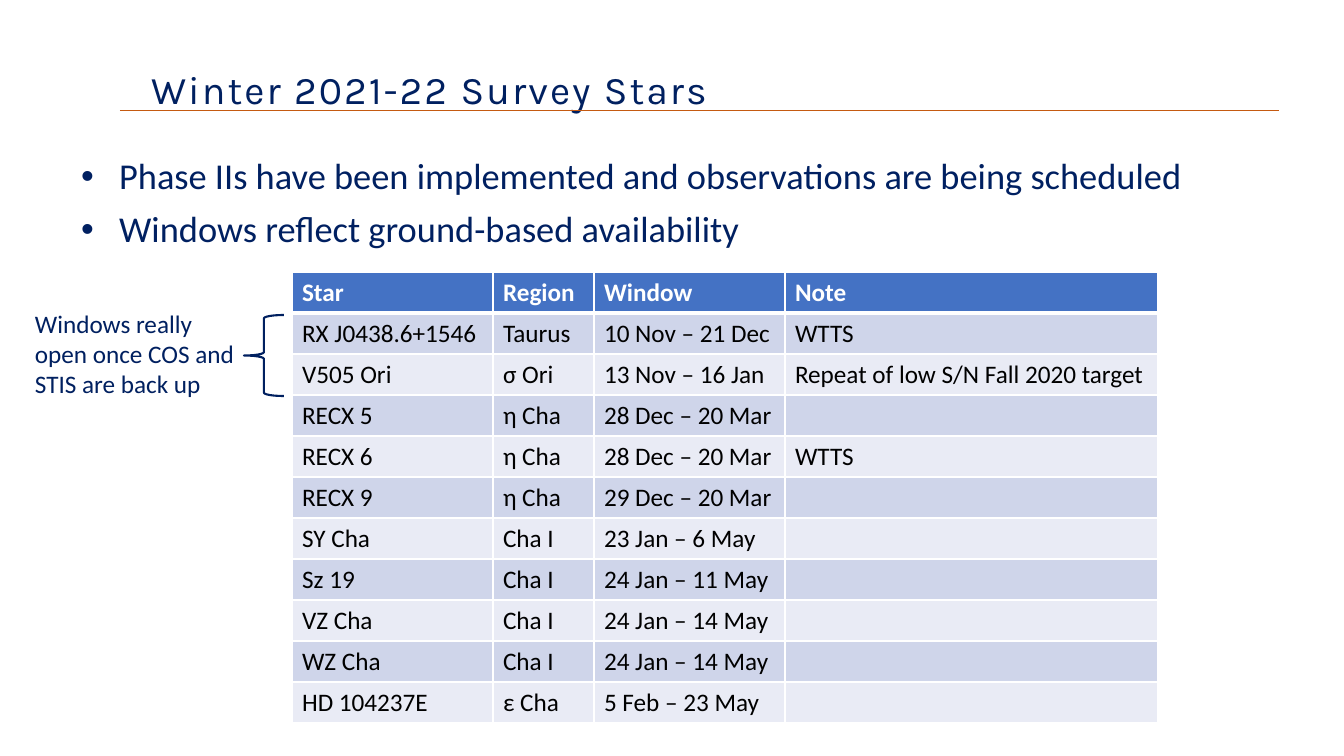
from lxml import etree
from pptx import Presentation, util as u
from pptx.dml.color import RGBColor
from pptx.enum import shapes, text
from pptx.oxml import ns

PX = 914400 / 100.8
NAVY = RGBColor(0x00, 0x20, 0x60)
LIST_NAVY = RGBColor(0x00, 0x20, 0x61)
RUST = RGBColor(0xC5, 0x5A, 0x11)
BLUE = RGBColor(0x44, 0x72, 0xC4)
BAND_DARK = RGBColor(0xCF, 0xD5, 0xEA)
BAND_LIGHT = RGBColor(0xE9, 0xEB, 0xF5)
WHITE = RGBColor(0xFF, 0xFF, 0xFF)
BLACK = RGBColor(0x00, 0x00, 0x00)


def px(*lengths):
    return [u.Emu(round(length * PX)) for length in lengths]


def write(para, words, size=18, font="Calibri", color=NAVY, bold=False,
          line_spacing=None, space_before=0, bullet=None, tracking=None):
    if bullet:
        properties = para._p.get_or_add_pPr()
        indent, = px(38)
        properties.set("marL", str(indent))
        properties.set("indent", str(-indent))
        etree.SubElement(properties, ns.qn("a:buFont")).set("typeface", "Arial")
        etree.SubElement(properties, ns.qn("a:buChar")).set("char", bullet)
    para.alignment = text.PP_ALIGN.LEFT
    para.line_spacing = line_spacing
    para.space_before = u.Pt(space_before)
    span = para.add_run()
    span.text = words
    span.font.size = u.Pt(size)
    span.font.name = font
    span.font.bold = bold
    span.font.color.rgb = color
    if tracking:
        span._r.get_or_add_rPr().set("spc", str(round(tracking * 100)))


deck = Presentation()
deck.slide_width, deck.slide_height = px(1344, 756)
page = deck.slides.add_slide(deck.slide_layouts[1])

# Title and the rule under it
title = page.shapes.title
title.left, title.top, title.width, title.height = px(141, 57, 1152, 69)
title.text_frame.auto_size = text.MSO_AUTO_SIZE.NONE
title.text_frame.vertical_anchor = text.MSO_ANCHOR.MIDDLE
write(title.text_frame.paragraphs[0], "Winter 2021-22 Survey Stars",
      size=28, font="Karla", line_spacing=0.9, tracking=1.5)

rule = page.shapes.add_connector(shapes.MSO_CONNECTOR.STRAIGHT, *px(120, 110, 1279, 110))
rule.line.color.rgb = RUST
rule.line.width = u.Pt(0.5)
etree.SubElement(rule._element.spPr, ns.qn("a:effectLst"))

# Bulleted list
body = page.placeholders[1]
body.left, body.top, body.width, body.height = px(71, 153, 1242, 547)
body.text_frame.auto_size = text.MSO_AUTO_SIZE.NONE
points = ["Phase IIs have been implemented and observations are being scheduled",
          "Windows reflect ground-based availability"]
for index, point in enumerate(points):
    para = body.text_frame.add_paragraph() if index else body.text_frame.paragraphs[0]
    write(para, point, size=26, color=LIST_NAVY, line_spacing=0.9,
          space_before=10 if index else 0, bullet="•")

# Table of survey stars
stars = [
    ("Star", "Region", "Window", "Note"),
    ("RX J0438.6+1546", "Taurus", "10 Nov – 21 Dec", "WTTS"),
    ("V505 Ori", "σ Ori", "13 Nov – 16 Jan", "Repeat of low S/N Fall 2020 target"),
    ("RECX 5", "η Cha", "28 Dec – 20 Mar", ""),
    ("RECX 6", "η Cha", "28 Dec – 20 Mar", "WTTS"),
    ("RECX 9", "η Cha", "29 Dec – 20 Mar", ""),
    ("SY Cha", "Cha I", "23 Jan – 6 May", ""),
    ("Sz 19", "Cha I", "24 Jan – 11 May", ""),
    ("VZ Cha", "Cha I", "24 Jan – 14 May", ""),
    ("WZ Cha", "Cha I", "24 Jan – 14 May", ""),
    ("HD 104237E", "ε Cha", "5 Feb – 23 May", ""),
]
column_widths = px(201, 101, 191, 373)
row_height, = px(41)
table = page.shapes.add_table(len(stars), len(column_widths),
                              *px(292, 272, 866, 451)).table
for column, width in zip(table.columns, column_widths):
    column.width = width
for row_index, star in enumerate(stars):
    header = row_index == 0
    table.rows[row_index].height = row_height
    for column_index, words in enumerate(star):
        cell = table.cell(row_index, column_index)
        cell.vertical_anchor = text.MSO_ANCHOR.TOP if header else text.MSO_ANCHOR.MIDDLE
        cell.fill.solid()
        cell.fill.fore_color.rgb = BLUE if header else BAND_DARK if row_index % 2 else BAND_LIGHT
        write(cell.text_frame.paragraphs[0], words, color=WHITE if header else BLACK, bold=header)
        # White borders, heavier between the header and the first star
        thick_side = {0: "lnB", 1: "lnT"}.get(row_index)
        for position, side in enumerate(("lnL", "lnR", "lnT", "lnB")):
            border = etree.Element(ns.qn("a:" + side))
            border.set("w", str(u.Pt(3 if side == thick_side else 1)))
            fill = etree.SubElement(border, ns.qn("a:solidFill"))
            etree.SubElement(fill, ns.qn("a:srgbClr")).set("val", str(WHITE))
            cell._tc.get_or_add_tcPr().insert(position, border)

# Side note with its brace
note = page.shapes.add_textbox(*px(25, 303, 233, 102))
note.text_frame.word_wrap = True
write(note.text_frame.paragraphs[0], "Windows really open once COS and STIS are back up")

brace = page.shapes.add_shape(shapes.MSO_SHAPE.LEFT_BRACE, *px(244, 315, 40, 81))
brace.shadow.inherit = False
brace.fill.background()
brace.line.color.rgb = NAVY
brace.line.width = u.Pt(1.5)

deck.save("out.pptx")
